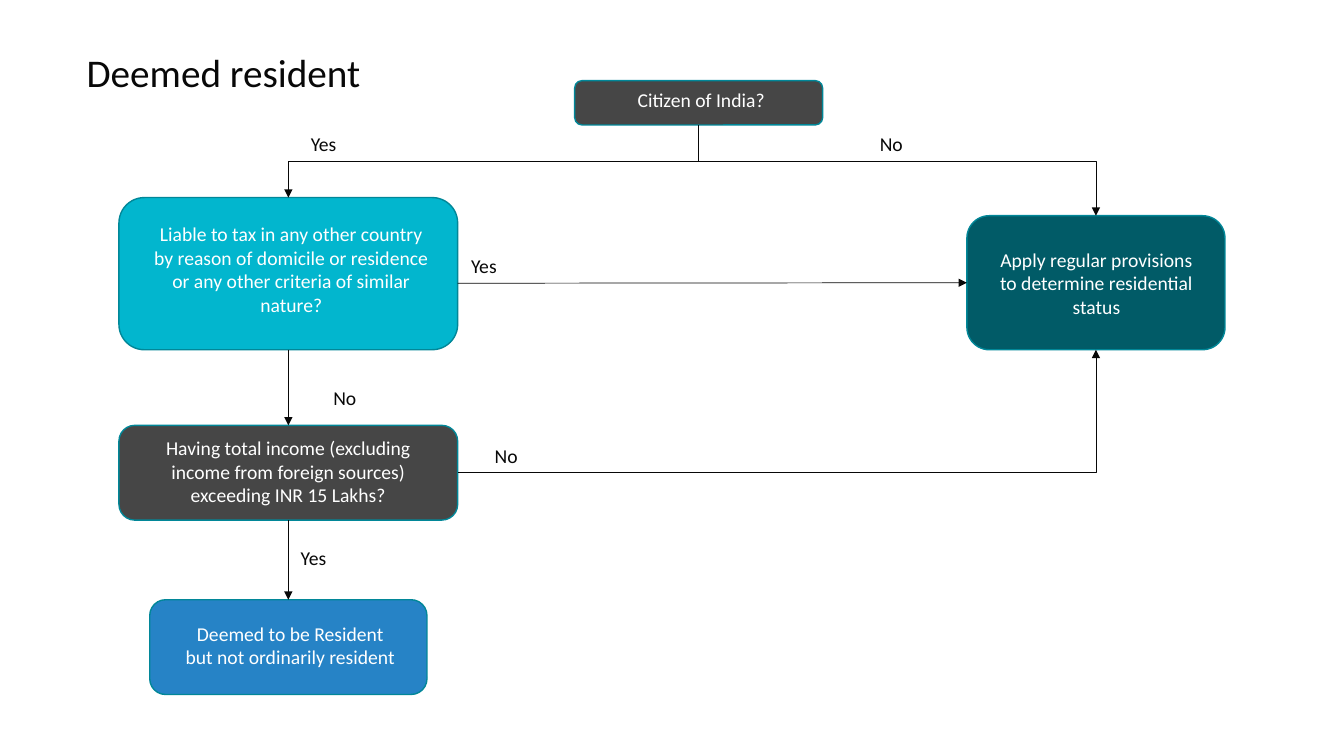
from lxml import etree
from pptx import Presentation
from pptx import util as u
from pptx.dml.color import RGBColor
from pptx.enum import shapes, text
from pptx.oxml.ns import qn

INK = RGBColor(0x08, 0x08, 0x08)
WHITE = RGBColor(0xFF, 0xFF, 0xFF)
EDGE = RGBColor(0x01, 0x87, 0x98)
CYAN = RGBColor(0x02, 0xB6, 0xCE)
TEAL = RGBColor(0x01, 0x5B, 0x67)
BLUE = RGBColor(0x26, 0x83, 0xC6)
GREY = RGBColor(0x46, 0x46, 0x46)

FONT = "Calibri"
TOP, LEFT, BOTTOM, RIGHT = range(4)

# Content: centre x, top, width, height, fill, (left, top, right) margins, wording
TITLE = "Deemed resident"
YES_X, NO_X = 2.86, 10.87
BOXES = {
    "citizen": (6.93, 0.8, 2.46, 0.44, GREY, (0.22, 0.05, 0.17),
                "Citizen of India?"),
    "liable": (YES_X, 1.96, 3.36, 1.51, CYAN, (0.26, 0.17, 0.2),
               "Liable to tax in any other country by reason of domicile or "
               "residence or any other criteria of similar nature?"),
    "regular": (NO_X, 2.14, 2.56, 1.33, TEAL, (0.17, 0.25, 0.16),
                "Apply regular provisions to determine residential status"),
    "income": (YES_X, 4.22, 3.36, 0.94, GREY, (0.13, 0.06, 0.13),
               "Having total income (excluding income from foreign sources) "
               "exceeding INR 15 Lakhs?"),
    "deemed": (YES_X, 5.95, 2.75, 0.94, BLUE, (0.28, 0.17, 0.24),
               "Deemed to be Resident but not ordinarily resident"),
}
# Answers: wording, left, top
ANSWERS = [("Yes", 2.79, 1.26), ("No", 8.42, 1.26), ("Yes", 4.38, 2.47),
           ("No", 3.0, 3.78), ("No", 4.6, 4.35), ("Yes", 2.69, 5.37)]
ANSWER_SIZE = (0.84, 0.34)
STRAIGHT_LINKS = [("liable", "income"), ("income", "deemed")]
BRANCHES = ["liable", "regular"]
BRANCH_DROP = 0.36
TAX_LINE_Y = 2.81


def inches(*values):
    return [u.Inches(value) for value in values]


def apply(target, values):
    for name, value in values.items():
        setattr(target, name, value)


def write(frame, wording, size, color, align):
    frame.word_wrap = True
    para = frame.paragraphs[0]
    para.alignment = align
    span = para.add_run()
    span.text = wording
    apply(span.font, {"name": FONT, "size": u.Pt(size)})
    span.font.color.rgb = color


def add_box(page, center, top, width, height, fill, margins, wording):
    box = page.shapes.add_shape(
        shapes.MSO_SHAPE.ROUNDED_RECTANGLE,
        *inches(center - width / 2, top, width, height))
    box.shadow.inherit = False
    box.fill.solid()
    box.fill.fore_color.rgb = fill
    box.line.color.rgb = EDGE
    box.line.width = u.Pt(1)
    left, above, right = inches(*margins)
    apply(box.text_frame, {
        "margin_left": left, "margin_top": above, "margin_right": right,
        "margin_bottom": 0, "vertical_anchor": text.MSO_ANCHOR.TOP})
    write(box.text_frame, wording, 14, WHITE, text.PP_ALIGN.CENTER)
    return box


def add_arrow(page, kind, end, end_side, start=None, start_side=BOTTOM, point=(0, 0)):
    arrow = page.shapes.add_connector(kind, *inches(*point, *point))
    if start is not None:
        arrow.begin_connect(start, start_side)
    arrow.end_connect(end, end_side)
    arrow.line.color.rgb = INK
    arrow.line.width = u.Pt(0.5)
    etree.SubElement(arrow.line._get_or_add_ln(), qn("a:tailEnd"), type="triangle")
    etree.SubElement(arrow._element.spPr, qn("a:effectLst"))
    return arrow


def turn_down(arrow, drop):
    """Make an elbow leave downwards, bending after the given drop."""
    x1, y1, x2, y2 = arrow.begin_x, arrow.begin_y, arrow.end_x, arrow.end_y
    width, height = y2 - y1, abs(x2 - x1)
    apply(arrow, {"left": (x1 + x2 - width) // 2, "top": (y1 + y2 - height) // 2,
                  "width": width, "height": height})
    frame = arrow._element.spPr.find(qn("a:xfrm"))
    rightward = x2 > x1
    frame.set("rot", str((270 if rightward else 90) * 60000))
    frame.set("flipH", "1" if rightward else "0")
    guides = arrow._element.spPr.find(qn("a:prstGeom")).find(qn("a:avLst"))
    share = round(u.Inches(drop) / width * 100000)
    etree.SubElement(guides, qn("a:gd"), name="adj1", fmla=f"val {share}")


def main():
    deck = Presentation()
    deck.slide_width, deck.slide_height = inches(13.33, 7.5)
    page = deck.slides.add_slide(deck.slide_layouts[5])

    # Title
    title = page.shapes.title
    left, top, width, height = inches(0.76, 0.31, 11.5, 0.86)
    apply(title, {"left": left, "top": top, "width": width, "height": height})
    title.text_frame.vertical_anchor = text.MSO_ANCHOR.MIDDLE
    write(title.text_frame, TITLE, 28, INK, text.PP_ALIGN.LEFT)
    title.text_frame.paragraphs[0].line_spacing = 0.9

    # Boxes
    boxes = {name: add_box(page, *values) for name, values in BOXES.items()}

    # Arrows
    line, elbow = shapes.MSO_CONNECTOR.STRAIGHT, shapes.MSO_CONNECTOR.ELBOW
    for start, end in STRAIGHT_LINKS:
        add_arrow(page, line, boxes[end], TOP, boxes[start])
    for end in BRANCHES:
        turn_down(add_arrow(page, elbow, boxes[end], TOP, boxes["citizen"]), BRANCH_DROP)
    liable_right = YES_X + BOXES["liable"][2] / 2
    add_arrow(page, line, boxes["regular"], LEFT, point=(liable_right, TAX_LINE_Y))
    corner = add_arrow(page, elbow, boxes["regular"], BOTTOM, boxes["income"], RIGHT)
    corner._element.spPr.find(qn("a:prstGeom")).set("prst", "bentConnector2")

    # Answers
    for wording, left, top in ANSWERS:
        label = page.shapes.add_textbox(*inches(left, top, *ANSWER_SIZE))
        write(label.text_frame, wording, 14, INK, text.PP_ALIGN.CENTER)

    deck.save("out.pptx")


if __name__ == "__main__":
    main()
